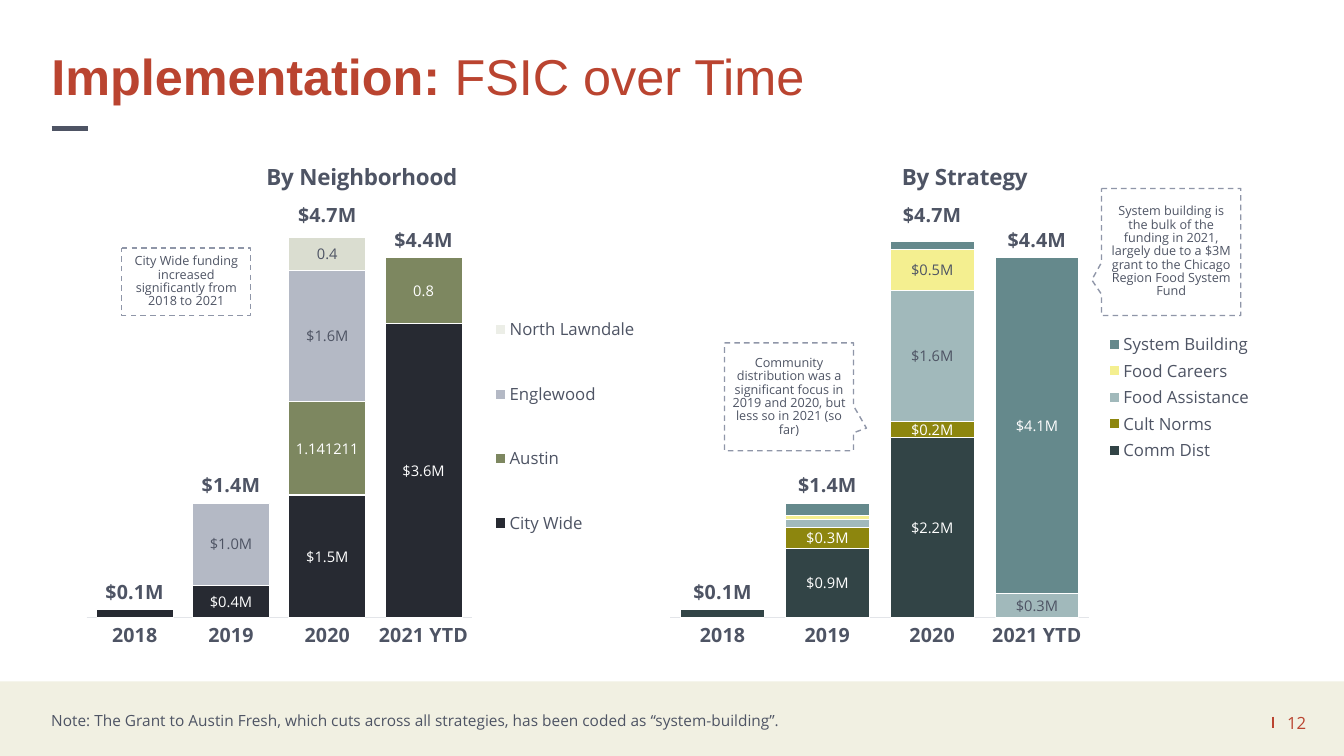
import dataclasses
import typing

import pptx
import pptx.chart.data
import pptx.dml.color
import pptx.enum.chart
import pptx.enum.dml
import pptx.enum.shapes
import pptx.enum.text
import pptx.oxml
import pptx.oxml.ns
import pptx.util

Cm = pptx.util.Cm
Pt = pptx.util.Pt
qn = pptx.oxml.ns.qn
Box = tuple[float, float, float, float]


@dataclasses.dataclass(frozen=True)
class Theme:
    heading_font: str = "Arial"
    body_font: str = "Open Sans"
    accent: str = "BA4430"
    text: str = "4E5464"
    white: str = "FFFFFF"
    band: str = "F1F0E2"
    axis: str = "E3E5E9"
    outline: str = "8F96A8"
    title_size: float = 36
    chart_title_size: float = 16
    total_size: float = 14
    legend_size: float = 12
    note_size: float = 11
    label_size: float = 10.5
    callout_size: float = 9


THEME = Theme()
MONEY = '"$"#,##0.0"M"'
YEARS = ["2018", "2019", "2020", "2021 YTD"]
TOTALS = [0.1, 1.4, 4.7, 4.4]


@dataclasses.dataclass(frozen=True)
class Stack:
    name: str
    values: list[typing.Optional[float]]
    fill: str
    label_color: str = THEME.white
    number_format: str = MONEY
    unlabelled: tuple[int, ...] = ()
    point_fills: tuple[tuple[int, str], ...] = ()


@dataclasses.dataclass(frozen=True)
class FundingChart:
    title: str
    box: Box
    title_spot: tuple[float, ...]
    plot_area: tuple[float, ...]
    legend_area: tuple[float, ...]
    own_total_axis: bool
    stacks: list[Stack]


@dataclasses.dataclass(frozen=True)
class Callout:
    text: str
    box: Box
    pointer: tuple[float, float]


CHARTS = [
    FundingChart("By Neighborhood", (1.9, 3.4, 14.27, 13.23), (0.33, 0.04), (0.02, 0.14, 0.68, 0.78),
                 (0.73, 0.27, 0.27, 0.57), True, [
        Stack("City Wide", [0.1, 0.4, 1.5, 3.6], "272A32", unlabelled=(0,)),
        Stack("Austin", [None, None, 1.141211, 0.8], "7D8760", number_format="General"),
        Stack("Englewood", [None, 1, 1.6, None], "B4B9C5", THEME.text),
        Stack("North Lawndale", [None, None, 0.4, None], "ECEEE7", THEME.text, "General",
              point_fills=((2, "DADDD0"),)),
    ]),
    FundingChart("By Strategy", (16.59, 3.4, 15.09, 13.23), (0.4, 0.04), (0.02, 0.14, 0.7, 0.78),
                 (0.74, 0.37, 0.26, 0.26), False, [
        Stack("Comm Dist", [0.1, 0.85, 2.2, None], "324446", unlabelled=(0,)),
        Stack("Cult Norms", [None, 0.25, 0.2, None], "8D860E"),
        Stack("Food Assistance", [None, 0.1, 1.6, 0.3], "A1B9BB", THEME.text, unlabelled=(1,)),
        Stack("Food Careers", [None, 0.05, 0.5, None], "F4EF90", THEME.text, unlabelled=(1,)),
        Stack("System Building", [None, 0.15, 0.1, 4.1], "65898C", unlabelled=(1, 2)),
    ]),
]

CALLOUTS = [
    Callout("City Wide funding increased significantly from 2018 to 2021",
            (3.07, 6.25, 3.25, 1.7), (0.5, 0.24)),
    Callout("Community distribution was a significant focus in 2019 and 2020, but less so in 2021 (so far)",
            (18.26, 8.64, 3.25, 2.72), (0.6, 0.29)),
    Callout("System building is the bulk of the funding in 2021, largely due to a $3M grant to the "
            "Chicago Region Food System Fund", (27.76, 4.75, 3.51, 3.2), (-0.57, 0.22)),
]


def rgb(code: str) -> pptx.dml.color.RGBColor:
    return pptx.dml.color.RGBColor.from_string(code)


def place(box: Box) -> list[int]:
    return [Cm(length) for length in box]


def chart_xml(text: str):
    head, tail = text.split(">", 1) if not text.split(">", 1)[0].endswith("/") else (text[:-2], None)
    spaces = " " + pptx.oxml.ns.nsdecls("c")
    return pptx.oxml.parse_xml(head + spaces + ("/>" if tail is None else ">" + tail))


def style_font(font, size: float, color: str, bold: bool = False, name: str = THEME.body_font) -> None:
    font.size, font.bold, font.name = Pt(size), bold, name
    font.color.rgb = rgb(color)


def add_span(para, text: str, size: float, color: str, bold: bool = False, name: str = THEME.body_font) -> None:
    span = para.add_run()
    span.text = text
    style_font(span.font, size, color, bold, name)


def add_note(page, box: Box, text: str, size: float, color: str, align, anchor, spacing: float) -> None:
    frame = page.shapes.add_textbox(*place(box)).text_frame
    frame.word_wrap = True
    frame.vertical_anchor = anchor
    para = frame.paragraphs[0]
    para.alignment, para.line_spacing = align, spacing
    add_span(para, text, size, color)


def add_line(page, start: tuple[float, float], end: tuple[float, float], color: str, width: float) -> None:
    line = page.shapes.add_connector(pptx.enum.shapes.MSO_CONNECTOR.STRAIGHT, *place(start + end))
    line.line.color.rgb = rgb(color)
    line.line.width = Pt(width)
    pptx.oxml.parse_xml
    line._element.spPr.append(pptx.oxml.parse_xml(f"<a:effectLst {pptx.oxml.ns.nsdecls('a')}/>"))


def set_layout(parent, previous, area: tuple[float, ...], target: str = "") -> None:
    for old in parent.findall(qn("c:layout")):
        parent.remove(old)
    keys = "xywh"[:len(area)]
    modes = "".join(f'<c:{key}Mode val="edge"/>' for key in keys if key in "xy")
    sizes = "".join(f'<c:{key} val="{value}"/>' for key, value in zip(keys, area))
    layout = chart_xml(f"<c:layout><c:manualLayout>{target}{modes}{sizes}</c:manualLayout></c:layout>")
    if previous is None:
        parent.insert(0, layout)
    else:
        previous.addnext(layout)


def style_labels(labels, size: float, color: str, number_format: str, bold: bool = False) -> None:
    labels.show_value = True
    labels.number_format, labels.number_format_is_linked = number_format, False
    style_font(labels.font, size, color, bold)


def style_stack(series, stack: Stack) -> None:
    for target, fill in [(series, stack.fill)] + [(series.points[i], fill) for i, fill in stack.point_fills]:
        target.format.fill.solid()
        target.format.fill.fore_color.rgb = rgb(fill)
        target.format.line.color.rgb = rgb(THEME.white)
        target.format.line.width = Pt(0.75)
    style_labels(series.data_labels, THEME.label_size, stack.label_color, stack.number_format)
    for position, index in enumerate(stack.unlabelled):
        hidden = chart_xml(f'<c:dLbl><c:idx val="{index}"/><c:delete val="1"/></c:dLbl>')
        series.data_labels._element.insert(position, hidden)


def turn_totals_into_line(chart, own_axis: bool) -> None:
    plot_area = chart._chartSpace.chart.plotArea
    bars = plot_area.find(qn("c:barChart"))
    totals = bars.findall(qn("c:ser"))[-1]
    for flag in totals.findall(qn("c:invertIfNegative")):
        totals.remove(flag)
    axes = [axis.get("val") for axis in bars.findall(qn("c:axId"))]
    if own_axis:
        axes = ["50010", "50020"]
        value_axis = plot_area.find(qn("c:valAx"))
        for kind, number, cross, side, crossing in (("valAx", *axes[::-1], "r", "max"),
                                                    ("catAx", *axes, "b", "autoZero")):
            limits = '<c:max val="5"/><c:min val="0"/>' if kind == "valAx" else ""
            value_axis.addnext(chart_xml(
                f'<c:{kind}><c:axId val="{number}"/><c:scaling><c:orientation val="minMax"/>{limits}</c:scaling>'
                f'<c:delete val="1"/><c:axPos val="{side}"/><c:crossAx val="{cross}"/>'
                f'<c:crosses val="{crossing}"/></c:{kind}>'))
    links = "".join(f'<c:axId val="{axis}"/>' for axis in axes)
    line = chart_xml(f'<c:lineChart><c:grouping val="standard"/><c:varyColors val="0"/>'
                     f'<c:marker val="1"/>{links}</c:lineChart>')
    line.insert(2, totals)
    bars.addnext(line)
    series = chart.plots[1].series[0]
    series.smooth = False
    series.format.line.fill.background()
    series.marker.style = pptx.enum.chart.XL_MARKER_STYLE.NONE
    style_labels(series.data_labels, THEME.total_size, THEME.text, MONEY, True)
    series.data_labels.position = pptx.enum.chart.XL_LABEL_POSITION.ABOVE


def add_funding_chart(page, funding: FundingChart) -> None:
    data = pptx.chart.data.CategoryChartData()
    data.categories = YEARS
    for stack in funding.stacks:
        data.add_series(stack.name, stack.values)
    data.add_series(f"Series {len(funding.stacks) + 1}", TOTALS)
    chart = page.shapes.add_chart(pptx.enum.chart.XL_CHART_TYPE.COLUMN_STACKED, *place(funding.box), data).chart
    style_font(chart.font, THEME.legend_size, THEME.text)
    bars = chart.plots[0]
    bars.gap_width, bars.overlap, bars.vary_by_categories = 25, 100, False
    for series, stack in zip(bars.series, funding.stacks):
        style_stack(series, stack)

    values, years = chart.value_axis, chart.category_axis
    values.minimum_scale, values.maximum_scale = 0, 5
    values.has_major_gridlines = values.visible = False
    years.major_tick_mark = pptx.enum.chart.XL_TICK_MARK.NONE
    years.format.line.color.rgb = rgb(THEME.axis)
    years.format.line.width = Pt(0.75)
    style_font(years.tick_labels.font, THEME.total_size, THEME.text, True)
    turn_totals_into_line(chart, funding.own_total_axis)

    add_span(chart.chart_title.text_frame.paragraphs[0], funding.title, THEME.chart_title_size, THEME.text, True)
    title = chart.chart_title._element
    set_layout(title, title.find(qn("c:tx")), funding.title_spot)
    chart.has_legend = True
    chart.legend.position = pptx.enum.chart.XL_LEGEND_POSITION.RIGHT
    chart.legend.include_in_layout = False
    style_font(chart.legend.font, THEME.legend_size, THEME.text)
    legend = chart.legend._element
    entry = chart_xml(f'<c:legendEntry><c:idx val="{len(funding.stacks)}"/><c:delete val="1"/></c:legendEntry>')
    legend.find(qn("c:legendPos")).addnext(entry)
    set_layout(legend, entry, funding.legend_area)
    set_layout(chart._chartSpace.chart.plotArea, None, funding.plot_area, '<c:layoutTarget val="inner"/>')


def add_box(page, kind, box: Box, fill: str):
    shape = page.shapes.add_shape(kind, *place(box))
    shape.shadow.inherit = False
    shape.fill.solid()
    shape.fill.fore_color.rgb = rgb(fill)
    shape.line.fill.background()
    return shape


def add_callout(page, callout: Callout) -> None:
    shape = add_box(page, pptx.enum.shapes.MSO_SHAPE.RECTANGULAR_CALLOUT, callout.box, THEME.white)
    shape.adjustments[0], shape.adjustments[1] = callout.pointer
    shape.line.color.rgb = rgb(THEME.outline)
    shape.line.width = Pt(1)
    shape.line.dash_style = pptx.enum.dml.MSO_LINE.DASH
    frame = shape.text_frame
    frame.word_wrap = True
    frame.margin_left = frame.margin_right = Cm(0.18)
    frame.vertical_anchor = pptx.enum.text.MSO_ANCHOR.MIDDLE
    para = frame.paragraphs[0]
    para.alignment, para.line_spacing = pptx.enum.text.PP_ALIGN.CENTER, 0.88
    add_span(para, callout.text, THEME.callout_size, THEME.text)


def add_title(page) -> None:
    title = page.shapes.title
    title.left, title.top, title.width, title.height = place((1.04, 1.19, 26.64, 2.21))
    frame = title.text_frame
    frame.auto_size = pptx.enum.text.MSO_AUTO_SIZE.NONE
    frame.vertical_anchor = pptx.enum.text.MSO_ANCHOR.TOP
    para = frame.paragraphs[0]
    para.alignment, para.line_spacing = pptx.enum.text.PP_ALIGN.LEFT, 0.9
    for text, bold in (("Implementation: ", True), ("FSIC over Time", False)):
        add_span(para, text, THEME.title_size, THEME.accent, bold, THEME.heading_font)


def main() -> None:
    deck = pptx.Presentation()
    deck.slide_width, deck.slide_height = Cm(33.87), Cm(19.05)
    page = deck.slides.add_slide(deck.slide_layouts[5])
    align, anchor = pptx.enum.text.PP_ALIGN, pptx.enum.text.MSO_ANCHOR
    add_box(page, pptx.enum.shapes.MSO_SHAPE.RECTANGLE, (0, 17.17, 33.87, 1.88), THEME.band)
    add_line(page, (32.08, 18.06), (32.08, 18.34), THEME.accent, 1)
    add_note(page, (31.42, 17.7, 1.75, 1.02), "12", THEME.legend_size, THEME.accent, align.RIGHT, anchor.MIDDLE, 1)
    add_line(page, (1.3, 3.23), (2.21, 3.23), THEME.text, 3.75)
    add_title(page)
    for funding in CHARTS:
        add_funding_chart(page, funding)
    add_note(page, (1.04, 17.73, 23.95, 0.76), "Note: The Grant to Austin Fresh, which cuts across all strategies, "
             "has been coded as “system-building”.", THEME.note_size, THEME.text, align.LEFT, anchor.TOP, 1.14)
    for callout in CALLOUTS:
        add_callout(page, callout)
    deck.save("out.pptx")


if __name__ == "__main__":
    main()
